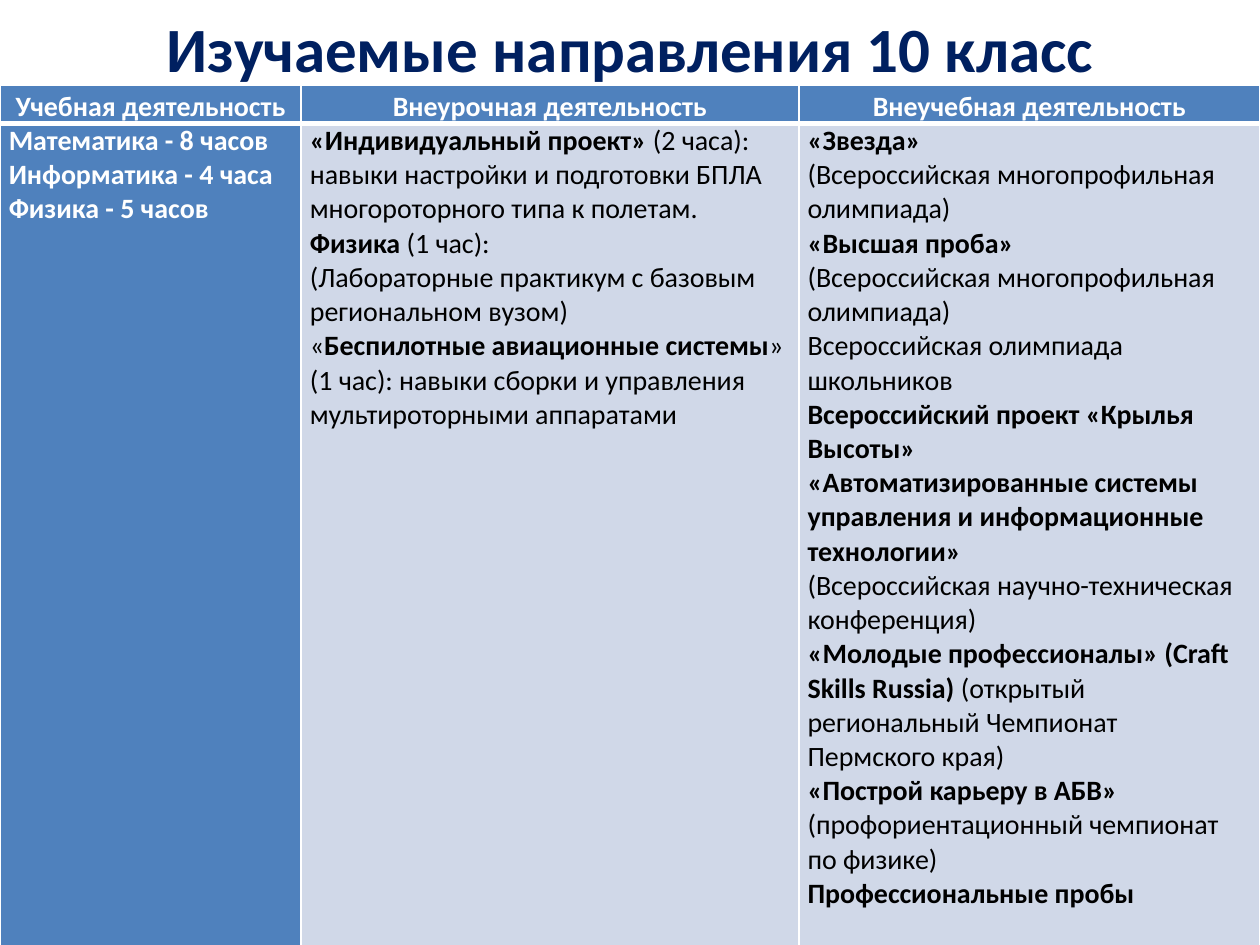
from dataclasses import dataclass

from lxml import etree
from pptx import Presentation
from pptx.dml.color import RGBColor
from pptx.enum.text import MSO_ANCHOR, PP_ALIGN
from pptx.oxml.ns import qn
from pptx.table import Table, _Cell
from pptx.text.text import TextFrame
from pptx.util import Inches, Pt

LEFT, MID = PP_ALIGN.LEFT, PP_ALIGN.CENTER
TOP, CENTRE = MSO_ANCHOR.TOP, MSO_ANCHOR.MIDDLE
NAVY = RGBColor(0x00, 0x20, 0x60)
BLUE = RGBColor(0x4F, 0x81, 0xBD)
PALE = RGBColor(0xD0, 0xD8, 0xE8)
WHITE = RGBColor(0xFF, 0xFF, 0xFF)
BLACK = RGBColor(0x00, 0x00, 0x00)
FONT = "Calibri"
WIDE, HIGH = Inches(10), Inches(7.5)
COLS = (0.239, 0.395, 0.366)
ROWS = (0.04, 0.87)
TITLE = "*Изучаемые направления 10 класс*"


@dataclass
class Column:
    head: str
    body: list[str]
    fill: RGBColor
    ink: RGBColor


COLUMNS = [
    Column("*Учебная деятельность*", [
        "*Математика - 8 часов*",
        "*Информатика - 4 часа*",
        "*Физика - 5 часов*",
    ], BLUE, WHITE),
    Column("*Внеурочная деятельность*", [
        "*«Индивидуальный проект» *(2 часа): навыки настройки и подготовки "
        "БПЛА многороторного типа к полетам.",
        "*Физика *(1 час):",
        "(Лабораторные практикум с базовым региональном вузом)",
        "«*Беспилотные авиационные системы*» (1 час): навыки сборки "
        "и управления мультироторными аппаратами",
    ], PALE, BLACK),
    Column("*Внеучебная деятельность*", [
        "*«Звезда»*",
        "(Всероссийская многопрофильная олимпиада)",
        "*«Высшая проба»*",
        "(Всероссийская многопрофильная олимпиада)",
        "Всероссийская олимпиада школьников",
        "*Всероссийский проект «Крылья Высоты»*",
        "*«Автоматизированные системы управления и информационные технологии»*",
        "(Всероссийская научно-техническая конференция)",
        "*«Молодые профессионалы» (Craft Skills Russia) *"
        "(открытый региональный Чемпионат Пермского края)",
        "*«Построй карьеру в АБВ» *(профориентационный чемпионат по физике)",
        "*Профессиональные пробы*",
    ], PALE, BLACK),
]


def write(frame: TextFrame, lines: list[str], *, ink: RGBColor,
          size: float = 16, align: PP_ALIGN = LEFT, pitch: float = 1.0) -> None:
    frame.word_wrap = True
    for i, line in enumerate(lines):
        para = frame.add_paragraph() if i else frame.paragraphs[0]
        para.alignment = align
        para.line_spacing = pitch
        for j, part in enumerate(line.split("*")):
            if part:
                run = para.add_run()
                run.text = part
                run.font.name = FONT
                run.font.size = Pt(size)
                run.font.bold = j % 2 == 1
                run.font.color.rgb = ink


def edge(cell: _Cell, side: str, width: float) -> None:
    props = cell._tc.get_or_add_tcPr()
    line = etree.SubElement(props, qn(f"a:ln{side}"), w=str(Pt(width)))
    fill = etree.SubElement(line, qn("a:solidFill"))
    etree.SubElement(fill, qn("a:srgbClr"), val=str(WHITE))


def dress(cell: _Cell, fill: RGBColor, top: float, base: float) -> None:
    cell.margin_left = cell.margin_right = Inches(0.07)
    cell.margin_top = cell.margin_bottom = 0
    cell.vertical_anchor = TOP
    for side, width in zip("LRTB", (1, 1, top, base)):
        edge(cell, side, width)
    cell.fill.solid()
    cell.fill.fore_color.rgb = fill


def draw(table: Table, index: int, item: Column) -> None:
    head, body = table.cell(0, index), table.cell(1, index)
    dress(head, BLUE, 1, 3)
    write(head.text_frame, [item.head], ink=WHITE, align=MID, pitch=1.15)
    dress(body, item.fill, 3, 1)
    write(body.text_frame, item.body, ink=item.ink)


def main() -> None:
    deck = Presentation()
    deck.slide_width, deck.slide_height = WIDE, HIGH
    slide = deck.slides.add_slide(deck.slide_layouts[6])

    box = slide.shapes.add_textbox(
        int(WIDE * 0.05), 0, int(WIDE * 0.9), int(HIGH * 0.1))
    box.text_frame.vertical_anchor = CENTRE
    write(box.text_frame, [TITLE], ink=NAVY, size=36, align=MID)

    table = slide.shapes.add_table(
        len(ROWS), len(COLS), 0, int(HIGH * 0.09),
        WIDE, int(HIGH * sum(ROWS))).table
    table.first_row = table.horz_banding = False
    for col, share in zip(table.columns, COLS):
        col.width = int(WIDE * share)
    for row, share in zip(table.rows, ROWS):
        row.height = int(HIGH * share)
    for index, item in enumerate(COLUMNS):
        draw(table, index, item)

    deck.save("out.pptx")


if __name__ == "__main__":
    main()
